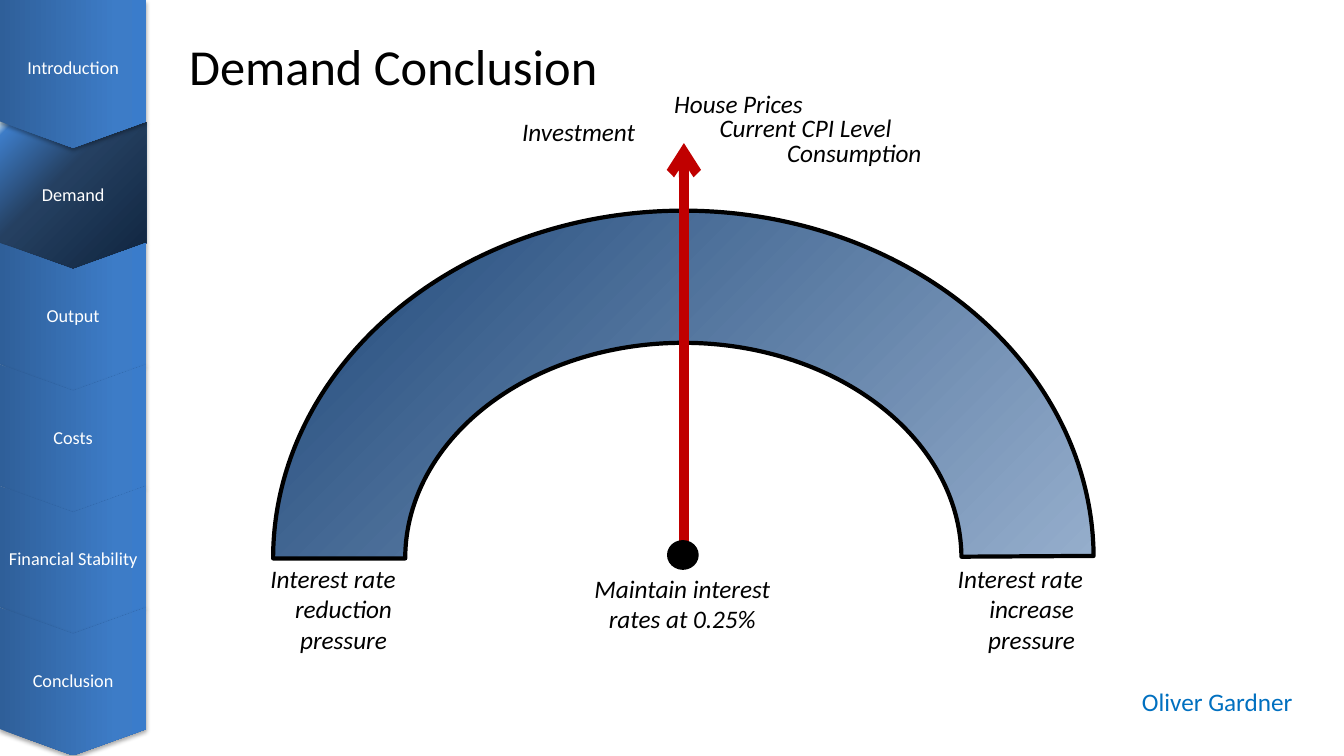
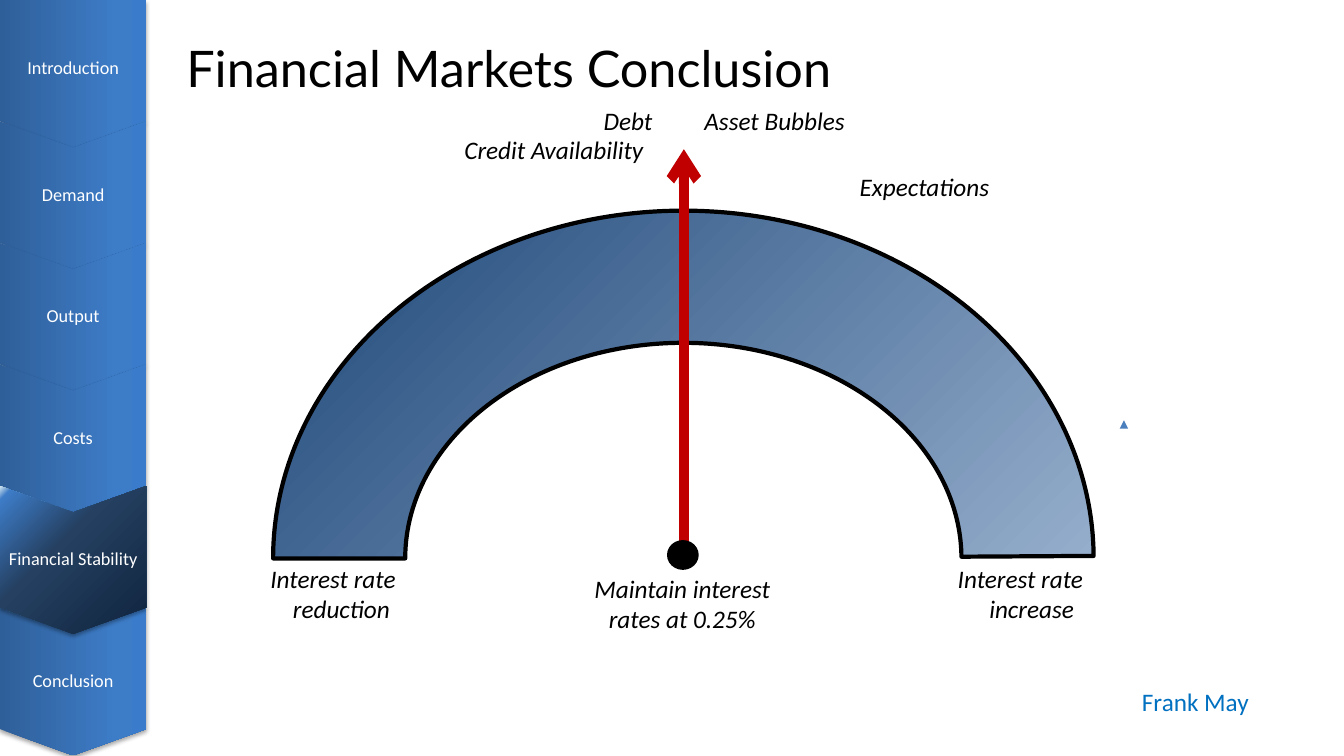
"""Build two gauge slides that share a chevron navigation rail."""

from dataclasses import dataclass

import pptx
import pptx.dml.color
import pptx.enum.shapes
import pptx.enum.text
import pptx.oxml
import pptx.oxml.ns
import pptx.util

Pt = pptx.util.Pt
RGBColor = pptx.dml.color.RGBColor
Align = pptx.enum.text.PP_ALIGN
Anchor = pptx.enum.text.MSO_ANCHOR
Shape = pptx.enum.shapes.MSO_SHAPE

BLACK = RGBColor(0x00, 0x00, 0x00)
WHITE = RGBColor(0xFF, 0xFF, 0xFF)
RED = RGBColor(0xC0, 0x00, 0x00)
AUTHOR_BLUE = RGBColor(0x00, 0x70, 0xC0)
MARKER_BLUE = RGBColor(0x4B, 0x7E, 0xBC)

LINEAR = '<a:lin ang="0" scaled="0"/>'
FROM_CORNER = '<a:path path="circle"><a:fillToRect l="100000" t="100000"/></a:path>'

SECTIONS = ("Introduction", "Demand", "Output", "Costs", "Financial Stability", "Conclusion")
RAIL_WIDTH = 104.4
CHEVRON_PITCH = 86.8
CHEVRON_POINT = 18.8
LABEL_HEIGHT = 28.8
GAUGE_CENTER = 488.5


@dataclass(frozen=True)
class Gradient:
    stops: tuple[tuple[int, RGBColor], ...]
    direction: str


@dataclass(frozen=True)
class TextStyle:
    size: float = 18
    color: RGBColor = BLACK
    italic: bool = True
    font: str = "Calibri"
    align: Align = Align.LEFT


@dataclass(frozen=True)
class Label:
    text: str
    left: float
    top: float
    width: float = 150


@dataclass(frozen=True)
class GaugeEnd:
    lines: tuple[str, ...]
    left: float
    indent: float


@dataclass(frozen=True)
class GaugeSlide:
    title: Label
    title_font: str
    author: str
    active: str
    stacking: tuple[int, ...]
    arrow_top: float
    factors: tuple[Label, ...]
    ends: tuple[GaugeEnd, ...]
    marker: bool = False


RAIL_FILL = Gradient(
    ((0, RGBColor(0x2F, 0x5F, 0x99)), (80, RGBColor(0x3D, 0x7C, 0xC7)),
     (100, RGBColor(0x3A, 0x7C, 0xCB))), LINEAR)
ACTIVE_FILL = Gradient(
    ((0, RGBColor(0x0F, 0x24, 0x3E)), (60, RGBColor(0x25, 0x40, 0x61)),
     (95, RGBColor(0x3D, 0x7C, 0xC7)), (100, RGBColor(0xDB, 0xEE, 0xF4))), FROM_CORNER)
ARC_FILL = Gradient(
    ((0, RGBColor(0xB9, 0xCD, 0xE5)), (100, RGBColor(0x1E, 0x47, 0x79))), FROM_CORNER)

FACTOR_STYLE = TextStyle()
CENTERED_STYLE = TextStyle(align=Align.CENTER)
AUTHOR_STYLE = TextStyle(color=AUTHOR_BLUE, italic=False)
RAIL_STYLE = TextStyle(size=13, color=WHITE, italic=False, align=Align.CENTER)

SLIDES = (
    GaugeSlide(
        title=Label("Demand Conclusion", 128, 1.4, 700),
        title_font="Calibri",
        author="Oliver Gardner",
        active="Demand",
        stacking=(1, 2, 3, 4, 5, 0),
        arrow_top=102.2,
        factors=(
            Label("Current CPI Level", 506.9, 77),
            Label("Investment", 365.8, 79.2),
            Label("Consumption", 555.1, 94.3),
            Label("House Prices", 474.5, 59.8),
        ),
        ends=(
            GaugeEnd(("Interest rate", "reduction", "pressure"), 172, 15),
            GaugeEnd(("Interest rate", "increase", "pressure"), 663, 16),
        ),
    ),
    GaugeSlide(
        title=Label("Financial Markets Conclusion", 126, 2.9, 700),
        title_font="Lato",
        author="Frank May",
        active="Financial Stability",
        stacking=(0, 1, 2, 5, 3, 4),
        arrow_top=106.6,
        factors=(
            Label("Asset Bubbles", 496.1, 72),
            Label("Expectations", 607, 118.8),
            Label("Debt", 424.1, 72),
            Label("Credit Availability", 324.7, 92.2),
        ),
        ends=(
            GaugeEnd(("Interest rate", "reduction"), 172, 12),
            GaugeEnd(("Interest rate", "increase"), 663, 16),
        ),
        marker=True,
    ),
)


def format_paragraph(paragraph, style: TextStyle) -> None:
    paragraph.alignment = style.align
    for run in paragraph.runs:
        run.font.size = Pt(style.size)
        run.font.name = style.font
        run.font.italic = style.italic
        run.font.color.rgb = style.color


def add_text(slide, label: Label, style: TextStyle, height: float = LABEL_HEIGHT):
    box = slide.shapes.add_textbox(
        Pt(label.left), Pt(label.top), Pt(label.width), Pt(height))
    frame = box.text_frame
    frame.word_wrap = True
    frame.text = label.text
    for paragraph in frame.paragraphs:
        format_paragraph(paragraph, style)
    return box


def fill_gradient(shape, gradient: Gradient) -> None:
    shape.fill.background()
    properties = shape._element.spPr
    stops = "".join(
        f'<a:gs pos="{position * 1000}"><a:srgbClr val="{color}"/></a:gs>'
        for position, color in gradient.stops)
    fill = pptx.oxml.parse_xml(
        f'<a:gradFill {pptx.oxml.ns.nsdecls("a")} rotWithShape="1">'
        f"<a:gsLst>{stops}</a:gsLst>{gradient.direction}</a:gradFill>")
    properties.replace(properties.find(pptx.oxml.ns.qn("a:noFill")), fill)


def add_soft_shadow(shape) -> None:
    shape.shadow.inherit = False
    effects = shape._element.spPr.find(pptx.oxml.ns.qn("a:effectLst"))
    effects.append(pptx.oxml.parse_xml(
        f'<a:outerShdw {pptx.oxml.ns.nsdecls("a")} blurRad="{Pt(3.1)}" dist="{Pt(1.8)}" '
        f'dir="5400000" rotWithShape="0"><a:srgbClr val="{BLACK}">'
        '<a:alpha val="35000"/></a:srgbClr></a:outerShdw>'))


def add_arrow(slide, x: float, start: float, end: float, color: RGBColor,
              width: float, head: str) -> None:
    arrow = slide.shapes.add_connector(
        pptx.enum.shapes.MSO_CONNECTOR.STRAIGHT, Pt(x), Pt(start), Pt(x), Pt(end))
    arrow.line.color.rgb = color
    arrow.line.width = Pt(width)
    namespace = pptx.oxml.ns.nsdecls("a")
    arrow.line._get_or_add_ln().append(
        pptx.oxml.parse_xml(f'<a:tailEnd {namespace} type="{head}"/>'))
    arrow._element.spPr.append(pptx.oxml.parse_xml(f"<a:effectLst {namespace}/>"))


def add_chevron(slide, index: int, active: bool) -> None:
    top = index * CHEVRON_PITCH
    bottom = top + CHEVRON_PITCH
    middle = RAIL_WIDTH / 2
    notch = top + CHEVRON_POINT if index else top
    outline = ((RAIL_WIDTH, bottom), (middle, bottom + CHEVRON_POINT),
               (0, bottom), (0, top), (middle, notch))
    builder = slide.shapes.build_freeform(Pt(RAIL_WIDTH), Pt(top))
    builder.add_line_segments([(Pt(x), Pt(y)) for x, y in outline], close=True)
    chevron = builder.convert_to_shape()
    fill_gradient(chevron, ACTIVE_FILL if active else RAIL_FILL)
    chevron.line.fill.background()
    add_soft_shadow(chevron)

    frame = chevron.text_frame
    frame.word_wrap = True
    frame.vertical_anchor = Anchor.MIDDLE
    frame.margin_left = frame.margin_right = Pt(2)
    frame.margin_top = Pt(0)
    frame.margin_bottom = Pt(0 if index else 7)
    frame.text = SECTIONS[index]
    frame.paragraphs[0].line_spacing = 0.9
    format_paragraph(frame.paragraphs[0], RAIL_STYLE)


def add_arc(slide) -> None:
    arc = slide.shapes.add_shape(
        Shape.BLOCK_ARC, Pt(195.1), Pt(150.5), Pt(586.1), Pt(496.8))
    for index, value in enumerate((108, 215.79, 0.19)):
        arc.adjustments[index] = value
    fill_gradient(arc, ARC_FILL)
    arc.line.color.rgb = BLACK
    arc.line.width = Pt(3)
    arc.shadow.inherit = False


def add_pivot(slide) -> None:
    pivot = slide.shapes.add_shape(Shape.OVAL, Pt(478.1), Pt(387.4), Pt(19.4), Pt(18))
    pivot.fill.solid()
    pivot.fill.fore_color.rgb = BLACK
    pivot.line.color.rgb = BLACK
    pivot.line.width = Pt(3.25)
    pivot.shadow.inherit = False


def add_gauge_end(slide, end: GaugeEnd) -> None:
    label = Label("\n".join(end.lines), end.left, 398.9, 131.8)
    box = add_text(slide, label, CENTERED_STYLE, 7.2 + 22 * len(end.lines))
    for paragraph in box.text_frame.paragraphs[1:]:
        properties = paragraph._p.get_or_add_pPr()
        properties.set("marL", str(Pt(end.indent)))
        properties.set("indent", "0")


def build_slide(presentation, content: GaugeSlide) -> None:
    slide = presentation.slides.add_slide(presentation.slide_layouts[6])
    title_style = TextStyle(size=36, italic=False, font=content.title_font)
    title = add_text(slide, content.title, title_style, 90)
    title.text_frame.vertical_anchor = Anchor.MIDDLE
    add_arc(slide)
    for end in content.ends:
        add_gauge_end(slide, end)
    add_text(slide, Label("Maintain interest rates at 0.25%", 410.4, 406.1, 154.1),
             CENTERED_STYLE, 51.1)
    for factor in content.factors:
        add_text(slide, factor, FACTOR_STYLE)
    add_text(slide, Label(content.author, 808.6, 486.7, 144), AUTHOR_STYLE)
    if content.marker:
        add_arrow(slide, 802.8, 302.4, 300.2, MARKER_BLUE, 0.75, "triangle")
    add_arrow(slide, GAUGE_CENTER, content.arrow_top + 291, content.arrow_top, RED, 7, "arrow")
    add_pivot(slide)
    for index in content.stacking:
        add_chevron(slide, index, SECTIONS[index] == content.active)


def main() -> None:
    presentation = pptx.Presentation()
    presentation.slide_width = Pt(960)
    presentation.slide_height = Pt(540)
    for content in SLIDES:
        build_slide(presentation, content)
    presentation.save("out.pptx")


if __name__ == "__main__":
    main()
